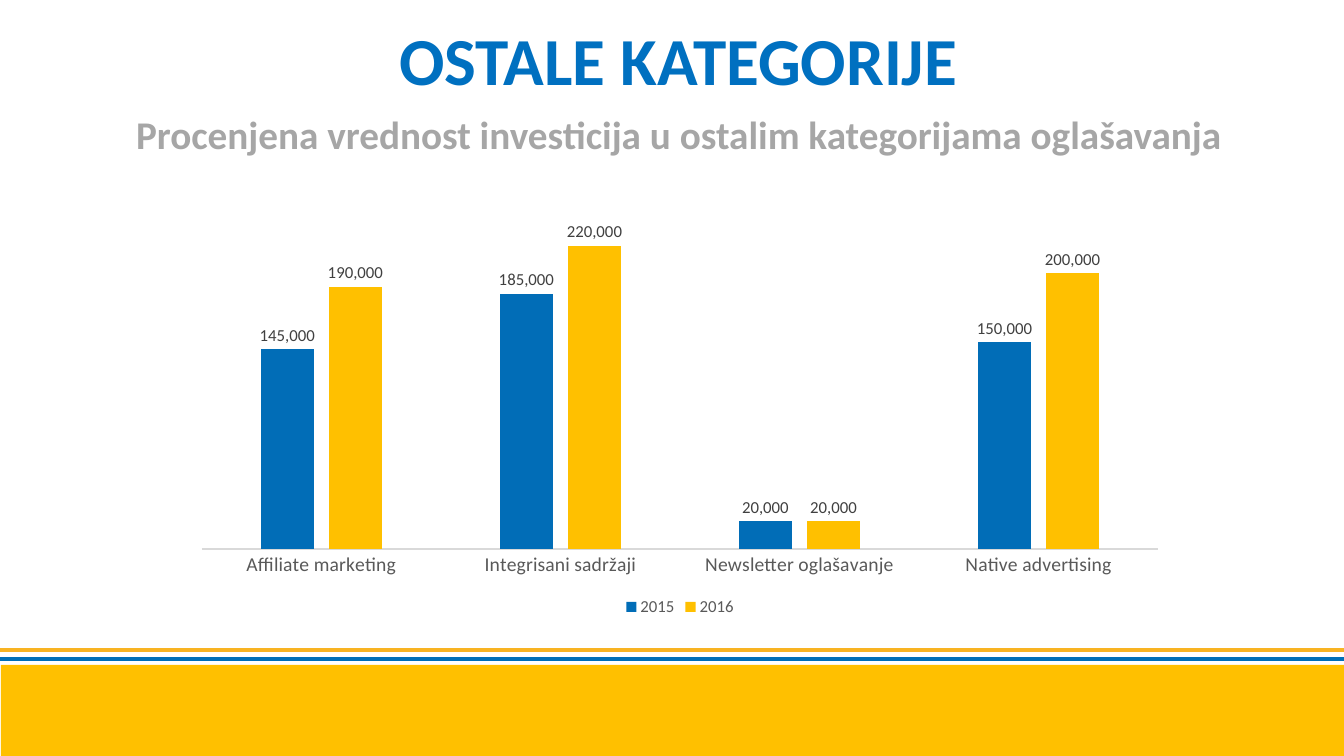
"""Build the slide on estimated investments in other advertising categories."""
from lxml.etree import SubElement
from pptx import Presentation
from pptx.chart.data import CategoryChartData
from pptx.dml.color import RGBColor
from pptx.enum.chart import XL_CHART_TYPE as ChartType, XL_LABEL_POSITION as LabelPos
from pptx.enum.chart import XL_LEGEND_POSITION as LegendPos, XL_TICK_MARK as TickMark
from pptx.enum.shapes import MSO_CONNECTOR as Connector, MSO_SHAPE as Shape
from pptx.enum.text import MSO_ANCHOR as Anchor, MSO_AUTO_SIZE as AutoSize, PP_ALIGN as Align
from pptx.oxml.ns import qn
from pptx.util import Emu, Pt

FONT = "Calibri"
TITLE_BLUE = RGBColor(0x00, 0x70, 0xC0)
BAR_BLUE = RGBColor(0x01, 0x6D, 0xB7)
RULE_BLUE = RGBColor(0x00, 0x6F, 0xB7)
YELLOW = RGBColor(0xFF, 0xC0, 0x00)
RULE_YELLOW = RGBColor(0xF8, 0xB3, 0x22)
WHITE = RGBColor(0xFF, 0xFF, 0xFF)
BLACK = RGBColor(0x00, 0x00, 0x00)
SUBTITLE_GREY = RGBColor(0xA6, 0xA6, 0xA6)
AXIS_GREY = RGBColor(0x59, 0x59, 0x59)
LABEL_GREY = RGBColor(0x40, 0x40, 0x40)
LINE_GREY = RGBColor(0xD9, 0xD9, 0xD9)

PX = 914400 / 100.8
WIDTH, HEIGHT = 1344, 756
TITLE = ("OSTALE KATEGORIJE", (129, 0, 1099, 118), 48, TITLE_BLUE)
SUBTITLE = ("Procenjena vrednost investicija u ostalim kategorijama oglašavanja",
            (129, 97, 1099, 74), 28, SUBTITLE_GREY)
BANDS = [((1, 665, 1344, 92), YELLOW), ((0, 575, 447, 51), WHITE)]
RULES = [(650, RULE_YELLOW), (659, RULE_BLUE)]
CHART_BOX = (182, 196, 996, 425)
CATEGORIES = ["Affiliate marketing", "Integrisani sadržaji",
              "Newsletter oglašavanje", "Native advertising"]
SERIES = [("2015", [145000, 185000, 20000, 150000], BAR_BLUE),
          ("2016", [190000, 220000, 20000, 200000], YELLOW)]
NUMBER_FORMAT = '_(* #,##0_);_(* \\(#,##0\\);_(* "-"??_);_(@_)'


def px(*lengths):
    return [Emu(round(length * PX)) for length in lengths]


def style(font, size, color, bold=False):
    font.name, font.size, font.bold = FONT, Pt(size), bold
    font.color.rgb = color


def write_heading(box, heading):
    text, place, size, color = heading
    box.left, box.top, box.width, box.height = px(*place)
    frame = box.text_frame
    frame.text = text
    frame.word_wrap = True
    frame.auto_size = AutoSize.NONE
    frame.vertical_anchor = Anchor.MIDDLE
    frame.margin_left = frame.margin_top = frame.margin_right = frame.margin_bottom = 0
    paragraph = frame.paragraphs[0]
    paragraph.alignment = Align.CENTER
    style(paragraph.runs[0].font, size, color, bold=True)


def add_footer(slide):
    for place, color in BANDS:
        band = slide.shapes.add_shape(Shape.RECTANGLE, *px(*place))
        band.shadow.inherit = False
        band.fill.solid()
        band.fill.fore_color.rgb = color
        band.line.fill.background()
    for y, color in RULES:
        rule = slide.shapes.add_connector(Connector.STRAIGHT, *px(0, y, WIDTH, y))
        rule.line.color.rgb = color
        rule.line.width = Pt(2.2)
        SubElement(rule.element.spPr, qn("a:effectLst"))


def add_investments(slide):
    data = CategoryChartData(number_format=NUMBER_FORMAT)
    data.categories = CATEGORIES
    for year, amounts, _ in SERIES:
        data.add_series(year, amounts)
    chart = slide.shapes.add_chart(ChartType.COLUMN_CLUSTERED, *px(*CHART_BOX), data).chart
    style(chart.font, 10, BLACK)
    chart.has_title = False
    chart.has_legend = True
    chart.legend.position = LegendPos.BOTTOM
    chart.legend.include_in_layout = False
    style(chart.legend.font, 12, AXIS_GREY)

    category_axis, value_axis = chart.category_axis, chart.value_axis
    category_axis.major_tick_mark = TickMark.NONE
    category_axis.format.line.color.rgb = LINE_GREY
    category_axis.format.line.width = Pt(0.75)
    style(category_axis.tick_labels.font, 14, AXIS_GREY)
    value_axis.has_major_gridlines = False
    value_axis.visible = False

    columns = chart.plots[0]
    columns.gap_width, columns.overlap = 219, -27
    columns.vary_by_categories = False
    for year, (_, _, color) in zip(columns.series, SERIES):
        year.format.fill.solid()
        year.format.fill.fore_color.rgb = color
        labels = year.data_labels
        labels.show_value = True
        labels.position = LabelPos.OUTSIDE_END
        labels.number_format = NUMBER_FORMAT
        labels.number_format_is_linked = False
        style(labels.font, 12, LABEL_GREY)


def main():
    deck = Presentation()
    deck.slide_width, deck.slide_height = px(WIDTH, HEIGHT)
    slide = deck.slides.add_slide(deck.slide_layouts[5])
    add_footer(slide)
    add_investments(slide)
    write_heading(slide.shapes.title, TITLE)
    write_heading(slide.shapes.add_textbox(*px(*SUBTITLE[1])), SUBTITLE)
    deck.save("out.pptx")


if __name__ == "__main__":
    main()
